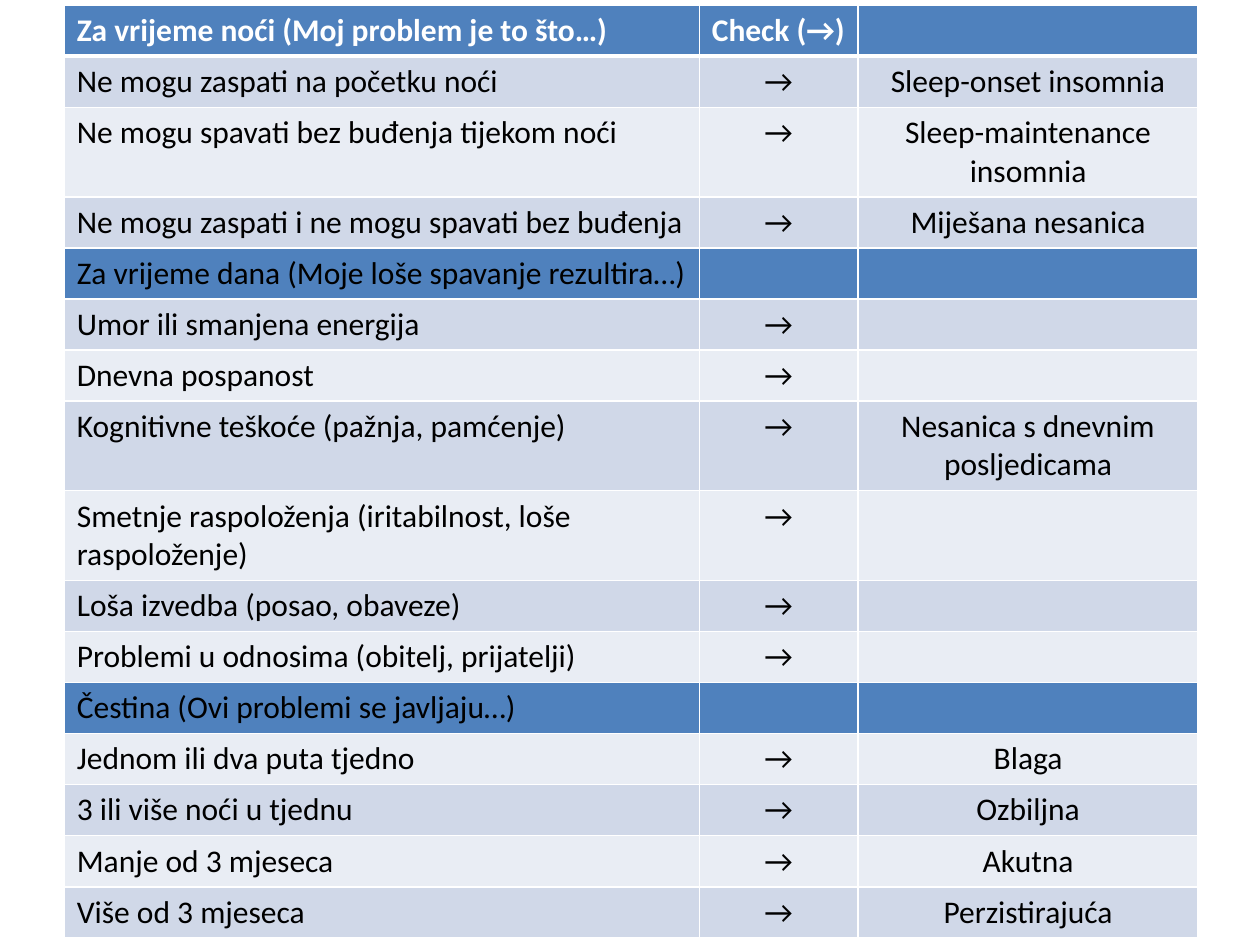
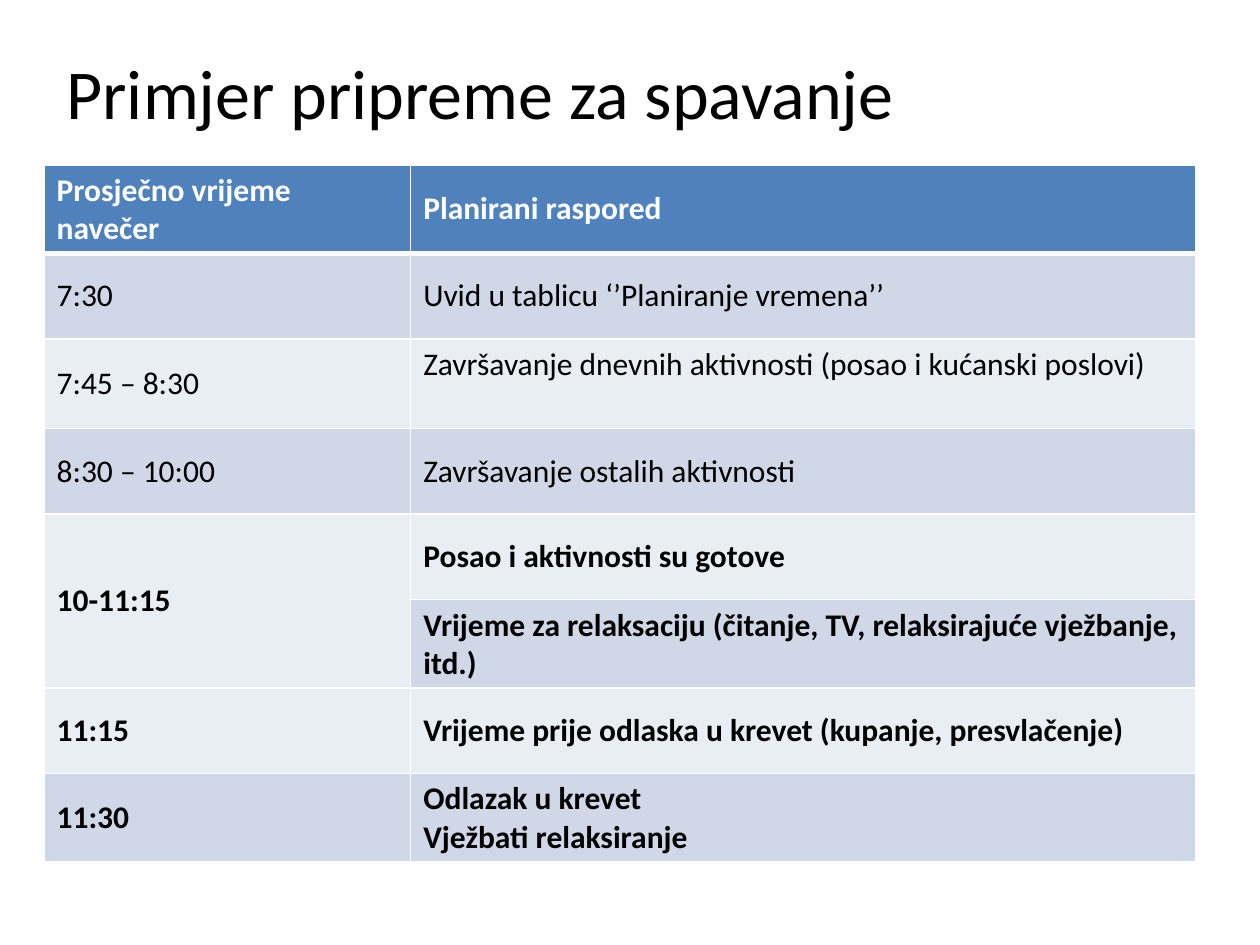
"""Builds two slides with tables on insomnia symptoms and an evening sleep plan."""
from lxml.etree import SubElement
from pptx import Presentation
from pptx.dml.color import RGBColor as RGB
from pptx.enum.text import MSO_ANCHOR as Anchor, PP_ALIGN as Align
from pptx.oxml.ns import qn
from pptx.util import Inches, Pt

WHITE = RGB(0xFF, 0xFF, 0xFF)
BLACK = RGB(0, 0, 0)
BLUE = RGB(0x4F, 0x81, 0xBD)
DARK = RGB(0xD0, 0xD8, 0xE8)
LIGHT = RGB(0xE9, 0xED, 0xF4)
FONT = "Calibri"


def edge(cell, side, width):
    """Draws one white border of a cell."""
    line = SubElement(cell._tc.get_or_add_tcPr(), qn(f"a:ln{side}"), w=str(Pt(width)))
    fill = SubElement(line, qn("a:solidFill"))
    SubElement(fill, qn("a:srgbClr"), val=str(WHITE))


def grid(slide, left, top, widths, height, rows, heads, bold, anchor):
    """Adds a banded table with blue heading rows."""
    frame = slide.shapes.add_table(
        len(rows), len(widths), Inches(left), Inches(top),
        Inches(sum(widths)), Inches(height * len(rows)))
    table = frame.table
    for col, width in zip(table.columns, widths):
        col.width = Inches(width)
    for r, row in enumerate(rows):
        table.rows[r].height = Inches(height)
        for c, text in enumerate(row):
            cell = table.cell(r, c)
            for side in "LRTB":
                thick = (r, side) in ((0, "B"), (1, "T"))
                edge(cell, side, 3 if thick else 1)
            cell.fill.solid()
            cell.fill.fore_color.rgb = BLUE if r in heads else DARK if r % 2 else LIGHT
            cell.vertical_anchor = anchor
            cell.text = text
            look = {"name": FONT, "size": Pt(18), "bold": r == 0 or r in bold}
            for para in cell.text_frame.paragraphs:
                for run in para.runs:
                    for key, value in look.items():
                        setattr(run.font, key, value)
                    run.font.color.rgb = BLACK if r else WHITE
    return table


deck = Presentation()
deck.slide_width, deck.slide_height = Inches(10), Inches(7.5)
blank = deck.slide_layouts[6]

signs = [
    ("Za vrijeme noći (Moj problem je to što…)", "Check (→)", ""),
    ("Ne mogu zaspati na početku noći", "→", "Sleep-onset insomnia"),
    ("Ne mogu spavati bez buđenja tijekom noći", "→", "Sleep-maintenance insomnia"),
    ("Ne mogu zaspati i ne mogu spavati bez buđenja", "→", "Miješana nesanica"),
    ("Za vrijeme dana (Moje loše spavanje rezultira…)", "", ""),
    ("Umor ili smanjena energija", "→", ""),
    ("Dnevna pospanost", "→", ""),
    ("Kognitivne teškoće (pažnja, pamćenje)", "→", "Nesanica s dnevnim posljedicama"),
    ("Smetnje raspoloženja (iritabilnost, loše raspoloženje)", "→", ""),
    ("Loša izvedba (posao, obaveze)", "→", ""),
    ("Problemi u odnosima (obitelj, prijatelji)", "→", ""),
    ("Čestina (Ovi problemi se javljaju…)", "", ""),
    ("Jednom ili dva puta tjedno", "→", "Blaga"),
    ("3 ili više noći u tjednu", "→", "Ozbiljna"),
    ("Manje od 3 mjeseca", "→", "Akutna"),
    ("Više od 3 mjeseca", "→", "Perzistirajuća"),
]
slide = deck.slides.add_slide(blank)
table = grid(slide, 0.51, 0.04, (5.04, 1.26, 2.7), 0.4, signs, (0, 4, 11), (), Anchor.TOP)
for r in range(1, len(signs)):
    for c in (1, 2):
        table.cell(r, c).text_frame.paragraphs[0].alignment = Align.CENTER

plan = [
    ("Prosječno vrijeme navečer", "Planirani raspored"),
    ("7:30", "Uvid u tablicu ‘’Planiranje vremena’’"),
    ("7:45 – 8:30", "Završavanje dnevnih aktivnosti (posao i kućanski poslovi)"),
    ("8:30 – 10:00", "Završavanje ostalih aktivnosti"),
    ("10-11:15", "Posao i aktivnosti su gotove"),
    ("", "Vrijeme za relaksaciju (čitanje, TV, relaksirajuće vježbanje, itd.)"),
    ("11:15", "Vrijeme prije odlaska u krevet (kupanje, presvlačenje)"),
    ("11:30", "Odlazak u krevet\nVježbati relaksiranje"),
]
slide = deck.slides.add_slide(blank)
title = slide.shapes.add_textbox(Inches(0.43), Inches(0.3), Inches(9.07), Inches(0.85))
frame = title.text_frame
frame.word_wrap = True
frame.vertical_anchor = Anchor.MIDDLE
frame.text = "Primjer pripreme za spavanje"
font = frame.paragraphs[0].runs[0].font
for key, value in {"name": FONT, "size": Pt(40)}.items():
    setattr(font, key, value)
font.color.rgb = BLACK

table = grid(slide, 0.35, 1.31, (2.91, 6.23), 0.68, plan, (0,), range(4, 8), Anchor.MIDDLE)
table.cell(4, 0).merge(table.cell(5, 0))
table.rows[2].height = Inches(0.71)
table.cell(2, 1).vertical_anchor = Anchor.TOP

deck.save("out.pptx")
